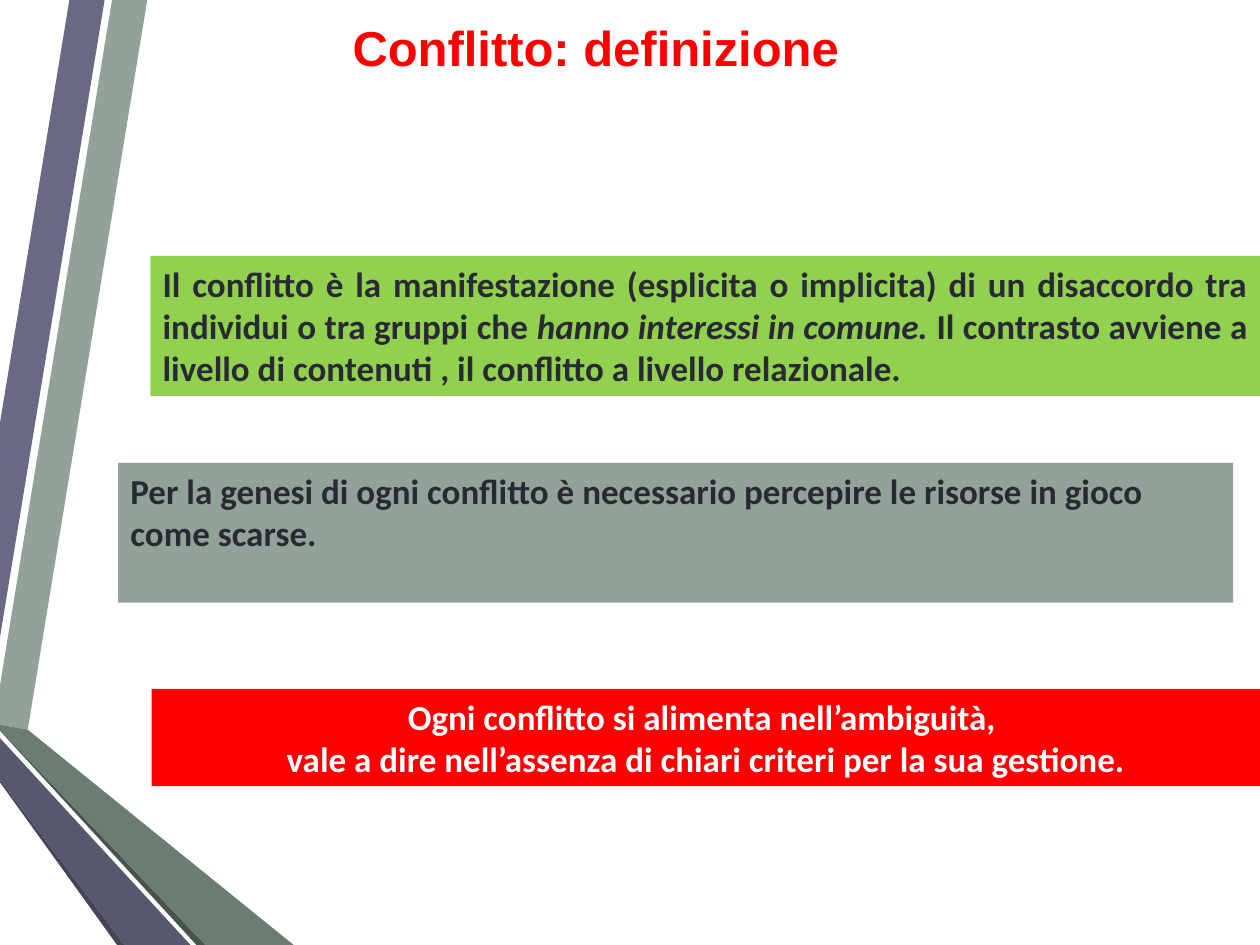
from dataclasses import dataclass

from pptx import Presentation
from pptx.dml.color import RGBColor
from pptx.enum.shapes import MSO_SHAPE
from pptx.enum.text import MSO_ANCHOR, MSO_AUTO_SIZE, PP_ALIGN
from pptx.util import Cm, Pt


@dataclass(frozen=True)
class Theme:
    red: str = "FF0000"
    lime: str = "92D050"
    sage: str = "93A299"
    sage_mid: str = "6B7D72"
    sage_dark: str = "47534C"
    violet: str = "696986"
    violet_mid: str = "57576E"
    violet_dark: str = "454557"
    ink: str = "292934"
    white: str = "FFFFFF"
    title_font: str = "Arial"
    body_font: str = "Calibri"
    title_size: int = 28
    body_size: int = 20


THEME = Theme()

# Folded ribbons along the left edge: colour and corners in centimetres
RIBBONS = [
    (THEME.sage, [(0, 13.82), (0, 14.61), (0.56, 14.71), (2.97, 0), (2.26, 0)]),
    (THEME.violet, [(2.11, 0), (1.4, 0), (0, 8.53), (0, 12.85)]),
    (THEME.violet_dark, [(0, 15.72), (0, 15.77), (2.36, 19.05), (2.51, 19.05)]),
    (THEME.sage_dark, [(0, 14.71), (0, 14.73), (3.96, 19.05), (4.14, 19.05)]),
    (THEME.sage_mid, [(0, 14.71), (4.14, 19.05), (5.92, 19.05), (0.56, 14.71),
                      (0, 14.61)]),
    (THEME.violet_mid, [(0, 15.72), (2.51, 19.05), (3.84, 19.05), (0, 14.88)]),
]


def paint(shape, color):
    shape.shadow.inherit = False
    shape.fill.solid()
    shape.fill.fore_color.rgb = RGBColor.from_string(color)
    shape.line.fill.background()


def set_font(font, name, size, color):
    font.name = name
    font.size = Pt(size)
    font.bold = True
    font.color.rgb = RGBColor.from_string(color)


def place(shape, left, top, width, height):
    shape.left, shape.top = Cm(left), Cm(top)
    shape.width, shape.height = Cm(width), Cm(height)


def add_ribbon(slide, color, corners):
    start, *others = [(Cm(x), Cm(y)) for x, y in corners]
    outline = slide.shapes.build_freeform(*start)
    outline.add_line_segments(others, close=True)
    paint(outline.convert_to_shape(), color)


def set_title(slide, wording):
    title = slide.shapes.title
    place(title, 4.39, 0.74, 15.24, 1.7)
    frame = title.text_frame
    frame.text = wording
    frame.auto_size = MSO_AUTO_SIZE.NONE
    frame.vertical_anchor = MSO_ANCHOR.MIDDLE
    frame.margin_top, frame.margin_bottom = 0, Cm(1.27)
    heading = frame.paragraphs[0]
    heading.alignment = PP_ALIGN.CENTER
    set_font(heading.font, THEME.title_font, THEME.title_size, THEME.red)


def add_statement(slide, bounds, fill, ink, alignment, paragraphs):
    """Add a filled box; each paragraph is a list of (wording, italic) parts."""
    panel = slide.shapes.add_shape(MSO_SHAPE.RECTANGLE, *map(Cm, bounds))
    paint(panel, fill)
    frame = panel.text_frame
    frame.word_wrap = True
    frame.vertical_anchor = MSO_ANCHOR.TOP
    for index, parts in enumerate(paragraphs):
        paragraph = frame.add_paragraph() if index else frame.paragraphs[0]
        paragraph.alignment = alignment
        set_font(paragraph.font, THEME.body_font, THEME.body_size, ink)
        for wording, italic in parts:
            run = paragraph.add_run()
            run.text = wording
            if italic:
                run.font.italic = True


def main():
    deck = Presentation()
    deck.slide_width, deck.slide_height = Cm(25.4), Cm(19.05)
    slide = deck.slides.add_slide(deck.slide_layouts.get_by_name("Title Only"))

    for color, corners in RIBBONS:
        add_ribbon(slide, color, corners)
    set_title(slide, "Conflitto: definizione")

    add_statement(
        slide, (3.03, 5.16, 22.37, 2.82), THEME.lime, THEME.ink, PP_ALIGN.JUSTIFY,
        [[("Il conflitto è la manifestazione (esplicita o implicita) di un "
           "disaccordo tra individui o tra gruppi che ", False),
          ("hanno interessi in comune. ", True),
          ("Il contrasto avviene a livello di contenuti , il conflitto a "
           "livello relazionale.", False)]])
    add_statement(
        slide, (2.38, 9.33, 22.48, 2.82), THEME.sage, THEME.ink, PP_ALIGN.LEFT,
        [[("Per la genesi di ogni conflitto è necessario percepire le risorse "
           "in gioco come scarse.", False)]])
    add_statement(
        slide, (3.06, 13.89, 22.34, 1.96), THEME.red, THEME.white, PP_ALIGN.CENTER,
        [[("Ogni conflitto si alimenta nell’ambiguità, ", False)],
         [("vale a dire nell’assenza di chiari criteri per la sua gestione.",
           False)]])

    deck.save("out.pptx")


if __name__ == "__main__":
    main()
